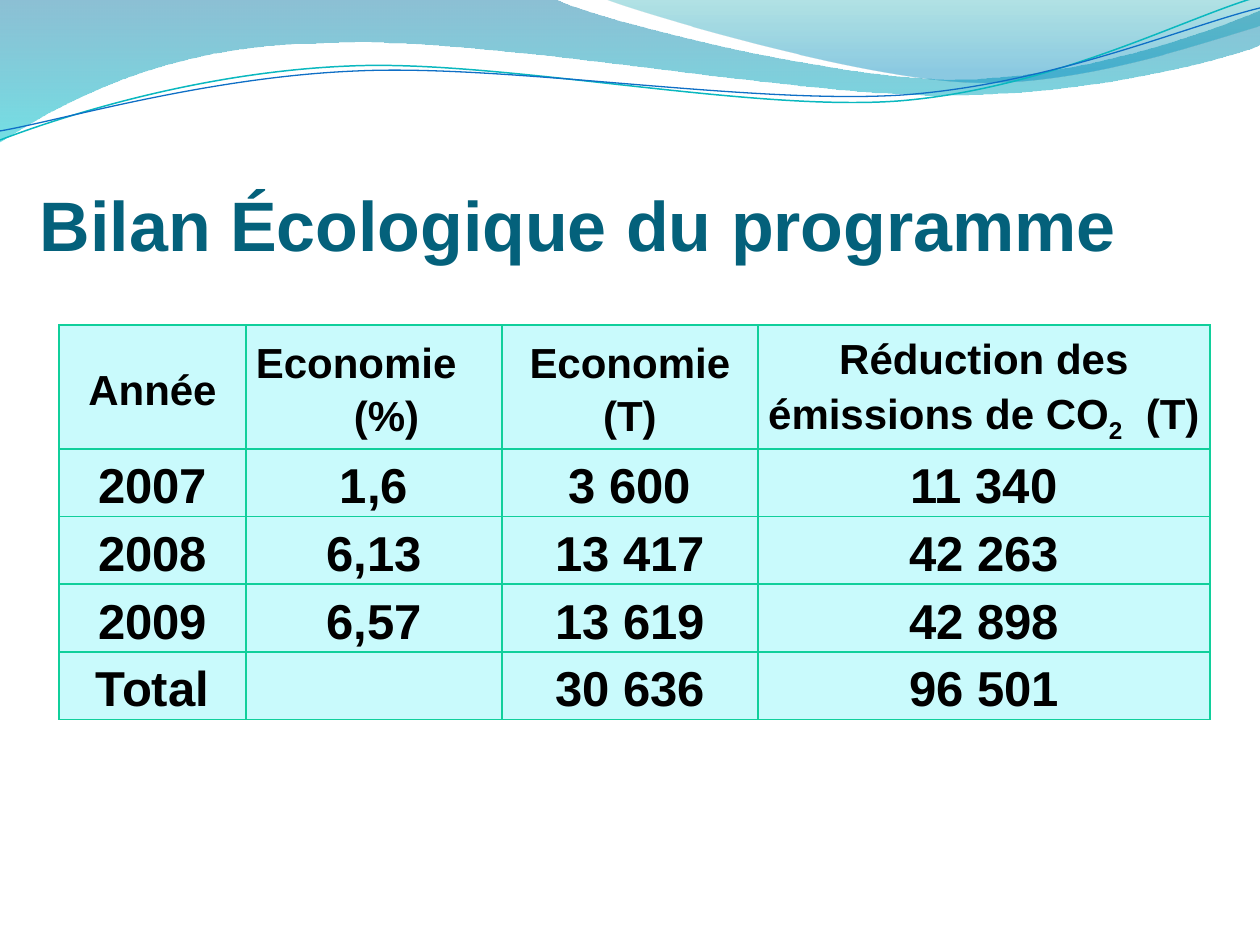
import pptx
import pptx.util
import pptx.dml.color
import pptx.enum.text
import pptx.oxml.ns
from lxml import etree

PX = 7257.6
FONT = "Arial"
COLORS = {
    "title": "04617B", "text": "000000", "cell": "C9FAFC", "border": "10CF9B",
    "blue": "0074A1", "cyan": "00C6CF", "teal": "00A1A9", "sky": "008BBF",
    "teal_line": "0AB8BF", "blue_line": "0F6FC6",
}

TITLE = "Bilan Écologique du programme"
TITLE_BOX = (40, 108, 1220, 158)
HEADER = [
    [("Année", False)],
    [("Economie (%)", False)],
    [("Economie (T)", False)],
    [("Réduction des émissions de CO", False), ("2", True), ("  (T)", False)],
]
ROWS = [
    ["2007", "1,6", "3 600", "11 340"],
    ["2008", "6,13", "13 417", "42 263"],
    ["2009", "6,57", "13 619", "42 898"],
    ["Total", "", "30 636", "96 501"],
]
TABLE_LEFT, TABLE_TOP, TABLE_HEIGHT = 59, 325, 364
COLUMN_WIDTHS = [187, 256, 256, 452]
MINIMUM_ROW_HEIGHT = 34
CELL_MARGIN = 9
PERCENT_COLUMN, PERCENT_LEFT, PERCENT_INDENT = 1, 99, 98

WAVES = [
    {"path": [(0, -1), (554, -1), (600, 21, 837, 79, 955, 79),
              (1075, 79, 1207, 33, 1260, 11), (1261, 45),
              (1239, 55, 1096, 96, 940, 95), (784, 95, 481, 35, 324, 43),
              (163, 44, 58, 105, -1, 142)],
     "stops": [(0, "blue", 45), (1, "cyan", 55)]},
    {"path": [(604, -1), (641, 14, 859, 78, 969, 82),
              (1079, 87, 1211, 40, 1260, 26), (1260, 0)],
     "stops": [(0, "teal", 30), (0.8, "sky", 45)]},
]
SWOOSHES = [
    {"path": [(0, 140), (60, 117, 199, 72, 349, 66),
              (498, 59, 747, 112, 898, 101), (1050, 89, 1182, 19, 1257, -3)],
     "color": "teal_line", "width": 0.85},
    {"path": [(0, 131), (59, 121, 207, 77, 357, 71),
              (508, 64, 752, 105, 903, 95), (1053, 84, 1186, 26, 1260, 8)],
     "color": "blue_line", "width": 0.75},
]


def emu(pixels):
    return pptx.util.Emu(round(pixels * PX))


def rgb(name):
    return pptx.dml.color.RGBColor.from_string(COLORS[name])


def add_outline(slide, path, closed):
    points = [(emu(x), emu(y)) for step in path for x, y in zip(step[::2], step[1::2])]
    builder = slide.shapes.build_freeform(*points[0])
    builder.add_line_segments(points[1:], close=closed)
    shape = builder.convert_to_shape()
    shape.shadow.inherit = False
    segments = iter(list(shape._element.spPr.iter(pptx.oxml.ns.qn("a:lnTo"))))
    for step in path[1:]:
        group = [next(segments) for _ in range(len(step) // 2)]
        if len(group) == 3:
            curve = etree.Element(pptx.oxml.ns.qn("a:cubicBezTo"))
            group[0].addprevious(curve)
            for segment in group:
                curve.append(segment[0])
                segment.getparent().remove(segment)
    return shape


def add_wave(slide, path, stops):
    shape = add_outline(slide, path, True)
    shape.line.fill.background()
    shape.fill.gradient()
    shape.fill.gradient_angle = 270
    for stop, (position, color, _) in zip(shape.fill.gradient_stops, stops):
        stop.position = position
        stop.color.rgb = rgb(color)
    gradient_colors = shape._element.spPr.iter(pptx.oxml.ns.qn("a:srgbClr"))
    for element, (_, _, opacity) in zip(list(gradient_colors), stops):
        etree.SubElement(element, pptx.oxml.ns.qn("a:alpha"), val=str(opacity * 1000))


def add_swoosh(slide, path, color, width):
    shape = add_outline(slide, path, False)
    shape.fill.background()
    shape.line.color.rgb = rgb(color)
    shape.line.width = pptx.util.Pt(width)


def add_run(paragraph, text, size, color):
    run = paragraph.add_run()
    run.text = text
    run.font.name = FONT
    run.font.size = pptx.util.Pt(size)
    run.font.bold = True
    run.font.color.rgb = rgb(color)
    return run


def add_title(slide):
    frame = slide.shapes.add_textbox(*map(emu, TITLE_BOX)).text_frame
    frame.word_wrap = True
    frame.vertical_anchor = pptx.enum.text.MSO_ANCHOR.BOTTOM
    frame.margin_left = frame.margin_right = frame.margin_bottom = 0
    add_run(frame.paragraphs[0], TITLE, 40, "title")


def add_borders(cell):
    properties = cell._tc.get_or_add_tcPr()
    for side in ("lnL", "lnR", "lnT", "lnB"):
        line = etree.SubElement(properties, pptx.oxml.ns.qn("a:" + side), w="12700")
        fill = etree.SubElement(line, pptx.oxml.ns.qn("a:solidFill"))
        etree.SubElement(fill, pptx.oxml.ns.qn("a:srgbClr"), val=COLORS["border"])


def fill_cell(cell, runs, size):
    add_borders(cell)
    cell.fill.solid()
    cell.fill.fore_color.rgb = rgb("cell")
    cell.vertical_anchor = pptx.enum.text.MSO_ANCHOR.MIDDLE
    cell.margin_left = cell.margin_right = emu(CELL_MARGIN)
    cell.margin_top = cell.margin_bottom = 0
    paragraph = cell.text_frame.paragraphs[0]
    paragraph.alignment = pptx.enum.text.PP_ALIGN.CENTER
    paragraph.line_spacing = 1.15
    for text, subscript in runs:
        run = add_run(paragraph, text, size, "text")
        if subscript:
            run.font._element.set("baseline", "-25000")


def add_results_table(slide):
    row_count = len(ROWS) + 1
    graphic_frame = slide.shapes.add_table(
        row_count, len(COLUMN_WIDTHS), emu(TABLE_LEFT), emu(TABLE_TOP),
        emu(sum(COLUMN_WIDTHS)), emu(TABLE_HEIGHT))
    table = graphic_frame.table
    table.first_row = table.horz_banding = False
    for column, width in zip(table.columns, COLUMN_WIDTHS):
        column.width = emu(width)
    for row in table.rows:
        row.height = emu(MINIMUM_ROW_HEIGHT)
    graphic_frame.height = emu(TABLE_HEIGHT)
    for column, runs in enumerate(HEADER):
        fill_cell(table.cell(0, column), runs, 24)
    for row, values in enumerate(ROWS, 1):
        for column, value in enumerate(values):
            fill_cell(table.cell(row, column), [(value, False)] if value else [], 28)
    paragraph = table.cell(0, PERCENT_COLUMN).text_frame.paragraphs[0]
    paragraph.alignment = pptx.enum.text.PP_ALIGN.LEFT
    properties = paragraph._p.get_or_add_pPr()
    properties.set("marL", str(emu(PERCENT_LEFT)))
    properties.set("indent", str(-emu(PERCENT_INDENT)))


def main():
    presentation = pptx.Presentation()
    presentation.slide_width, presentation.slide_height = emu(1260), emu(945)
    slide = presentation.slides.add_slide(presentation.slide_layouts[6])
    for wave in WAVES:
        add_wave(slide, **wave)
    for swoosh in SWOOSHES:
        add_swoosh(slide, **swoosh)
    add_title(slide)
    add_results_table(slide)
    presentation.save("out.pptx")


if __name__ == "__main__":
    main()
